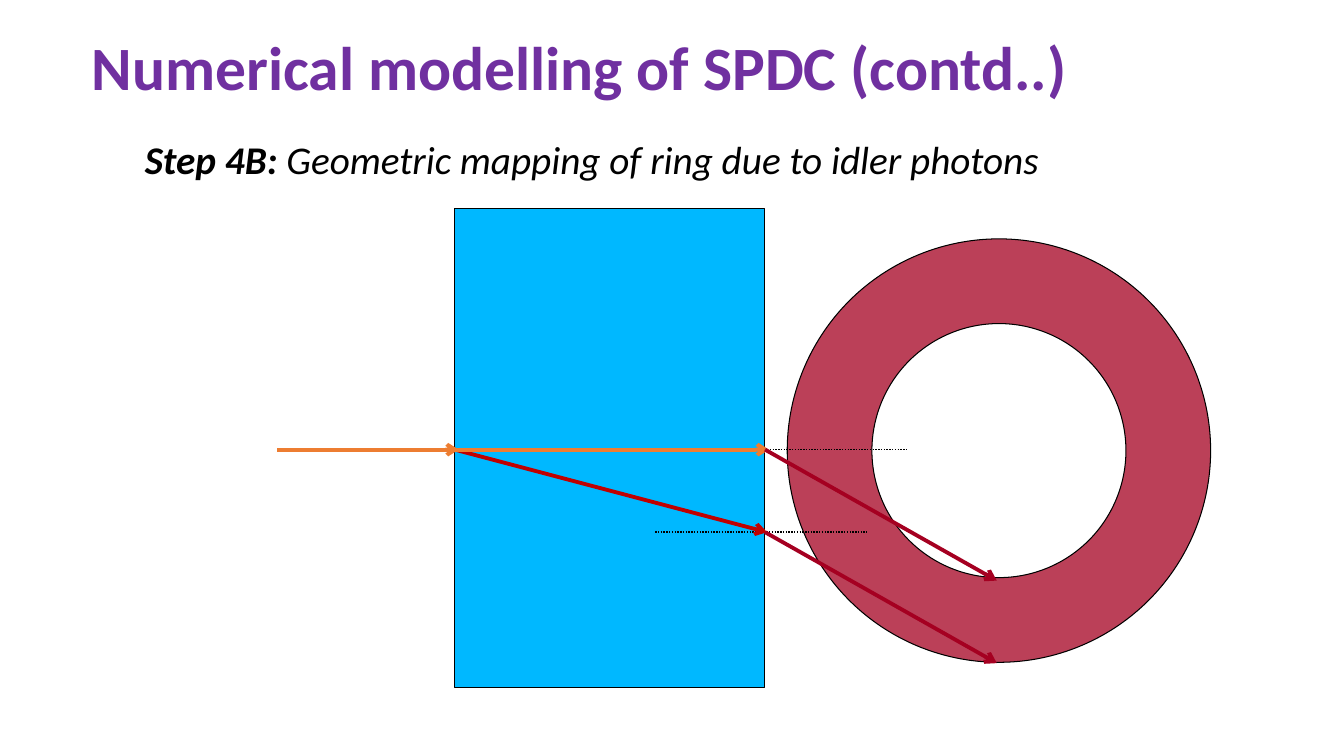
import dataclasses

import lxml.etree
import pptx
import pptx.dml.color
import pptx.enum.dml
import pptx.enum.shapes
import pptx.enum.text
import pptx.oxml.ns
import pptx.presentation
import pptx.shapes.autoshape
import pptx.slide
import pptx.util

Cm = pptx.util.Cm
qn = pptx.oxml.ns.qn


@dataclasses.dataclass(frozen=True)
class Theme:
    font: str = "Calibri"
    title_size: float = 44
    step_size: float = 28
    title: str = "7030A0"
    ink: str = "000000"
    crystal: str = "00B8FF"
    pump: str = "ED7D31"
    inner_idler: str = "C00000"
    idler: str = "A50021"
    outline: float = 0.75
    normal_line: float = 1
    ray_line: float = 2.75


@dataclasses.dataclass(frozen=True)
class Block:
    """A filled, outlined shape; lengths in cm, opacity in percent."""
    kind: pptx.enum.shapes.MSO_SHAPE
    left: float
    top: float
    width: float
    height: float
    fill: str
    opacity: int = 100
    adjustment: float | None = None


@dataclasses.dataclass(frozen=True)
class Ray:
    """A light ray, or a dotted surface normal; lengths in cm."""
    start: tuple[float, float]
    end: tuple[float, float]
    colour: str
    is_normal: bool = False


THEME = Theme()

# Optical geometry
AXIS = 11.33
EXIT_Y = 13.41
ENTRY_X = 11.46
EXIT_X = 19.28
RING_X = 25.12
IDLER_DROP = 3.3

BLOCKS = [
    Block(pptx.enum.shapes.MSO_SHAPE.DONUT, 19.84, 6.02, 10.67, 10.67,
          THEME.idler, opacity=75, adjustment=0.2),
    Block(pptx.enum.shapes.MSO_SHAPE.RECTANGLE, ENTRY_X, 5.26,
          EXIT_X - ENTRY_X, 12.07, THEME.crystal),
]

RAYS = [
    Ray((6.99, AXIS), (11.56, AXIS), THEME.pump),
    Ray((9.32, AXIS), (22.89, AXIS), THEME.ink, is_normal=True),
    Ray((16.51, EXIT_Y), (21.84, EXIT_Y), THEME.ink, is_normal=True),
    Ray((ENTRY_X, AXIS), (19.33, EXIT_Y), THEME.inner_idler),
    Ray((EXIT_X, EXIT_Y), (RING_X, EXIT_Y + IDLER_DROP), THEME.idler),
    Ray((7.19, AXIS), (19.38, AXIS), THEME.pump),
    Ray((EXIT_X, AXIS), (RING_X, AXIS + IDLER_DROP), THEME.idler),
]


def rgb(colour: str) -> pptx.dml.color.RGBColor:
    return pptx.dml.color.RGBColor.from_string(colour)


def style_font(font: pptx.text.text.Font, size: float, colour: str) -> None:
    font.name = THEME.font
    font.size = pptx.util.Pt(size)
    font.color.rgb = rgb(colour)


def write_title(page: pptx.slide.Slide, text: str) -> None:
    title = page.shapes.title
    title.left, title.top = Cm(2.06), Cm(0.33)
    title.width, title.height = Cm(29.21), Cm(2.9)
    frame = title.text_frame
    frame.text = text
    frame.auto_size = pptx.enum.text.MSO_AUTO_SIZE.NONE
    frame.vertical_anchor = pptx.enum.text.MSO_ANCHOR.MIDDLE
    para = frame.paragraphs[0]
    para.alignment = pptx.enum.text.PP_ALIGN.LEFT
    para.line_spacing = 0.9
    style_font(para.font, THEME.title_size, THEME.title)
    para.font.bold = True


def write_step(page: pptx.slide.Slide, label: str, text: str) -> None:
    box = page.shapes.add_textbox(Cm(3.4), Cm(3.28), Cm(23.22), Cm(1.45))
    box.text_frame.word_wrap = False
    box.text_frame.auto_size = pptx.enum.text.MSO_AUTO_SIZE.SHAPE_TO_FIT_TEXT
    para = box.text_frame.paragraphs[0]
    style_font(para.font, THEME.step_size, THEME.ink)
    para.font.italic = True
    for words, bold in ((label, True), (text, False)):
        span = para.add_run()
        span.text = words
        span.font.bold = bold


def draw_block(page: pptx.slide.Slide, block: Block) -> None:
    shape = page.shapes.add_shape(block.kind, Cm(block.left), Cm(block.top),
                                  Cm(block.width), Cm(block.height))
    shape.shadow.inherit = False
    shape.fill.solid()
    shape.fill.fore_color.rgb = rgb(block.fill)
    shape.line.color.rgb = rgb(THEME.ink)
    shape.line.width = pptx.util.Pt(THEME.outline)
    if block.adjustment is not None:
        shape.adjustments[0] = block.adjustment
    if block.opacity < 100:
        colour = shape.fill._xPr.find(qn("a:solidFill")).find(qn("a:srgbClr"))
        lxml.etree.SubElement(colour, qn("a:alpha"), val=str(block.opacity * 1000))


def draw_ray(page: pptx.slide.Slide, ray: Ray) -> None:
    connector = page.shapes.add_connector(
        pptx.enum.shapes.MSO_CONNECTOR.STRAIGHT,
        *(Cm(length) for length in ray.start + ray.end))
    line = connector.line
    line.color.rgb = rgb(ray.colour)
    if ray.is_normal:
        line.width = pptx.util.Pt(THEME.normal_line)
        line.dash_style = pptx.enum.dml.MSO_LINE.ROUND_DOT
    else:
        line.width = pptx.util.Pt(THEME.ray_line)
        lxml.etree.SubElement(line._get_or_add_ln(), qn("a:tailEnd"), type="arrow")
    lxml.etree.SubElement(connector._element.spPr, qn("a:effectLst"))


def build_deck() -> pptx.presentation.Presentation:
    deck = pptx.Presentation()
    deck.slide_width, deck.slide_height = Cm(33.87), Cm(19.05)
    page = deck.slides.add_slide(deck.slide_layouts.get_by_name("Title Only"))

    # Heading
    write_title(page, "Numerical modelling of SPDC (contd..)")
    write_step(page, "Step 4B: ", "Geometric mapping of ring due to idler photons")

    # Idler ring and crystal, then the rays on top
    for block in BLOCKS:
        draw_block(page, block)
    for ray in RAYS:
        draw_ray(page, ray)
    return deck


if __name__ == "__main__":
    build_deck().save("out.pptx")
